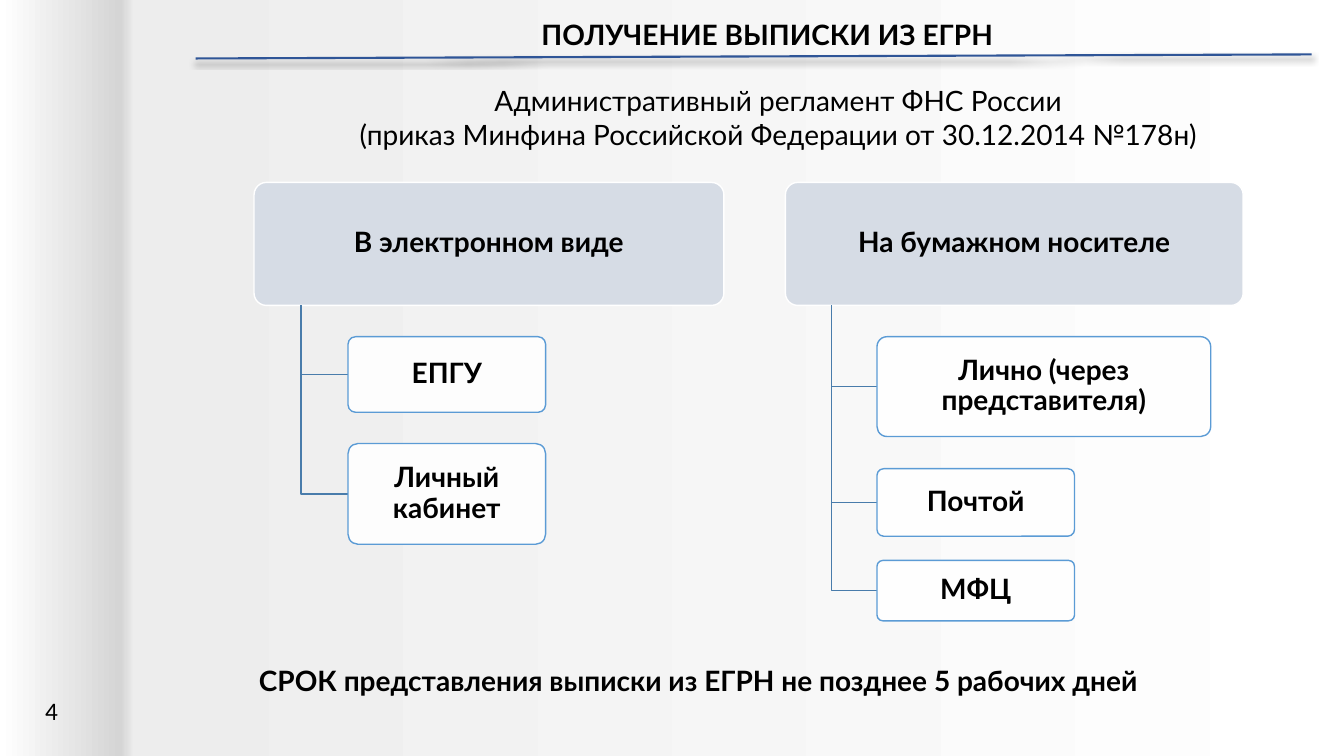
from lxml import etree
from pptx import Presentation
from pptx.dml.color import RGBColor
from pptx.enum.shapes import MSO_CONNECTOR, MSO_SHAPE
from pptx.enum.text import MSO_ANCHOR, MSO_AUTO_SIZE, PP_ALIGN
from pptx.oxml.ns import qn
from pptx.util import Inches, Pt

LEFT, CENTER = PP_ALIGN.LEFT, PP_ALIGN.CENTER
TOP, MIDDLE = MSO_ANCHOR.TOP, MSO_ANCHOR.MIDDLE
NO_AUTOFIT = MSO_AUTO_SIZE.NONE
ROUNDED, STRAIGHT = MSO_SHAPE.ROUNDED_RECTANGLE, MSO_CONNECTOR.STRAIGHT
TITLE_ONLY = 5

COLORS = {
    "text": "000000", "white": "FFFFFF", "header": "D6DCE5",
    "box_line": "5B9BD5", "branch": "497CAB", "rule": "2F5597",
}
BACKGROUND = [(0, "FFFFFF", 100), (9, "D5D5D5", 71), (10, "EDEDED", 100), (100, "FFFFFF", 100)]

TITLE = "ПОЛУЧЕНИЕ ВЫПИСКИ ИЗ ЕГРН"
REGULATION = [
    "Административный регламент ФНС России",
    "(приказ Минфина Российской Федерации от 30.12.2014 №178н)",
]
DEADLINE = "СРОК представления выписки из ЕГРН не позднее 5 рабочих дней"
PAGE = "4"

HEADER_TOP, HEADER_HEIGHT = 1.81, 1.22
METHODS = [
    ("В электронном виде", 2.52, 4.66, [
        ("ЕПГУ", 3.34, 1.96, 0.75),
        ("Личный кабинет", 4.4, 1.96, 1),
    ]),
    ("На бумажном носителе", 7.79, 4.54, [
        ("Лично (через представителя)", 3.34, 3.31, 0.99),
        ("Почтой", 4.65, 1.96, 0.67),
        ("МФЦ", 5.56, 1.96, 0.6),
    ]),
]


def rgb(name):
    return RGBColor.from_string(COLORS[name])


def add_color(parent, value, alpha):
    color = etree.SubElement(parent, qn("a:srgbClr"), val=value)
    if alpha < 100:
        etree.SubElement(color, qn("a:alpha"), val=str(alpha * 1000))


def write(tf, lines, size=20, font="Lato", bold=True, align=LEFT, anchor=TOP, wrap=True):
    tf.text = "\n".join(lines)
    tf.auto_size = NO_AUTOFIT
    tf.word_wrap = wrap
    tf.vertical_anchor = anchor
    for p in tf.paragraphs:
        p.alignment = align
        p.font.size, p.font.name, p.font.bold = Pt(size), font, bold
        p.font.color.rgb = rgb("text")


def add_text(s, box, lines, **style):
    tf = s.shapes.add_textbox(*map(Inches, box)).text_frame
    write(tf, lines, **style)
    return tf


def add_box(s, text, box, fill, line, alpha=100):
    sp = s.shapes.add_shape(ROUNDED, *map(Inches, box))
    sp.shadow.inherit = False
    sp.adjustments[0] = 0.1
    sp.fill.solid()
    sp.fill.fore_color.rgb = rgb(fill)
    if alpha < 100:
        color = sp.fill._xPr.find(qn("a:solidFill")).find(qn("a:srgbClr"))
        etree.SubElement(color, qn("a:alpha"), val=str(alpha * 1000))
    sp.line.color.rgb = rgb(line)
    sp.line.width = Pt(1)
    tf = sp.text_frame
    write(tf, [text], align=CENTER, anchor=MIDDLE)
    tf.margin_left = tf.margin_right = Inches(0.07)
    tf.margin_top = tf.margin_bottom = Inches(0.06)
    tf.paragraphs[0].line_spacing = 0.9


def add_branch(s, x, top, end_x, end_y):
    builder = s.shapes.build_freeform(Inches(x), Inches(top))
    builder.add_line_segments(
        [(Inches(x), Inches(end_y)), (Inches(end_x), Inches(end_y))], close=False)
    sp = builder.convert_to_shape()
    sp.shadow.inherit = False
    sp.fill.background()
    sp.line.color.rgb = rgb("branch")
    sp.line.width = Pt(1)


def set_background(s):
    fill = s.background.fill
    fill.gradient()
    fill.gradient_angle = 0
    stops = next(s._element.iter(qn("a:gsLst")))
    for stop in list(stops):
        stops.remove(stop)
    for position, value, alpha in BACKGROUND:
        stop = etree.SubElement(stops, qn("a:gs"), pos=str(position * 1000))
        add_color(stop, value, alpha)


def add_rule(s):
    rule = s.shapes.add_connector(STRAIGHT, *map(Inches, (1.94, 0.58, 13.01, 0.54)))
    rule.line.color.rgb = rgb("rule")
    rule.line.width = Pt(1.5)
    effects = etree.SubElement(rule._element.spPr, qn("a:effectLst"))
    shadow = etree.SubElement(
        effects, qn("a:outerShdw"), blurRad=str(Pt(4)), dist=str(Pt(3)),
        dir="5400000", rotWithShape="0")
    add_color(shadow, COLORS["text"], 40)


def main():
    prs = Presentation()
    prs.slide_width, prs.slide_height = Inches(13.33), Inches(7.5)
    s = prs.slides.add_slide(prs.slide_layouts[TITLE_ONLY])
    set_background(s)

    title = s.shapes.title
    title.left, title.top, title.width, title.height = map(Inches, (5.27, 0.12, 6.19, 0.44))
    write(title.text_frame, [TITLE])
    add_rule(s)

    add_text(s, (0.35, 6.85, 0.33, 0.4), [PAGE], size=18, font="Calibri", bold=False, wrap=False)
    tf = add_text(s, (1.94, 0.78, 11.06, 0.77), REGULATION, bold=False, align=CENTER)
    for p in tf.paragraphs:
        p._p.get_or_add_pPr().set("indent", str(Inches(0.5)))
    add_text(s, (2.47, 6.53, 10.73, 0.44), [DEADLINE])

    for header, left, width, options in METHODS:
        add_box(s, header, (left, HEADER_TOP, width, HEADER_HEIGHT), "header", "white")
        trunk_x, option_x = left + 0.1 * width, left + 0.2 * width
        for text, top, option_width, height in options:
            add_branch(s, trunk_x, HEADER_TOP + HEADER_HEIGHT, option_x, top + height / 2)
            add_box(s, text, (option_x, top, option_width, height), "white", "box_line", 90)

    prs.save("out.pptx")


if __name__ == "__main__":
    main()
